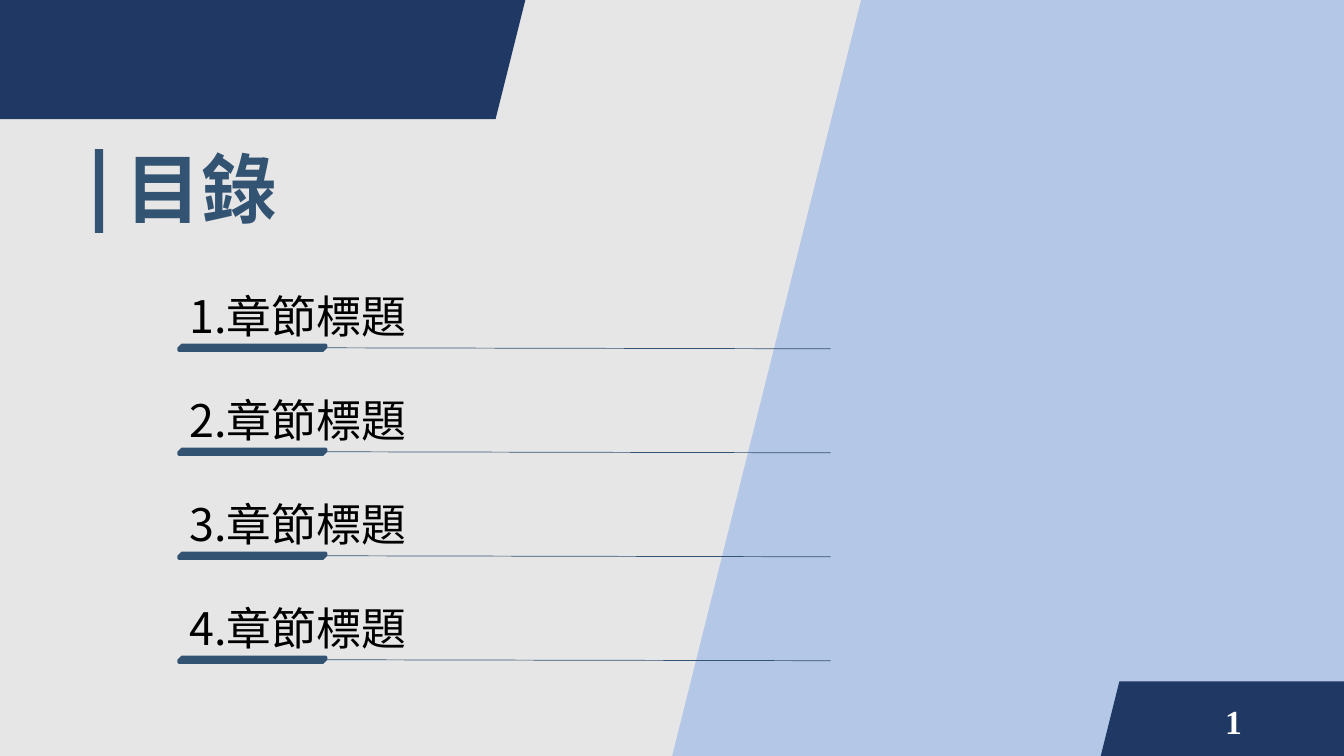
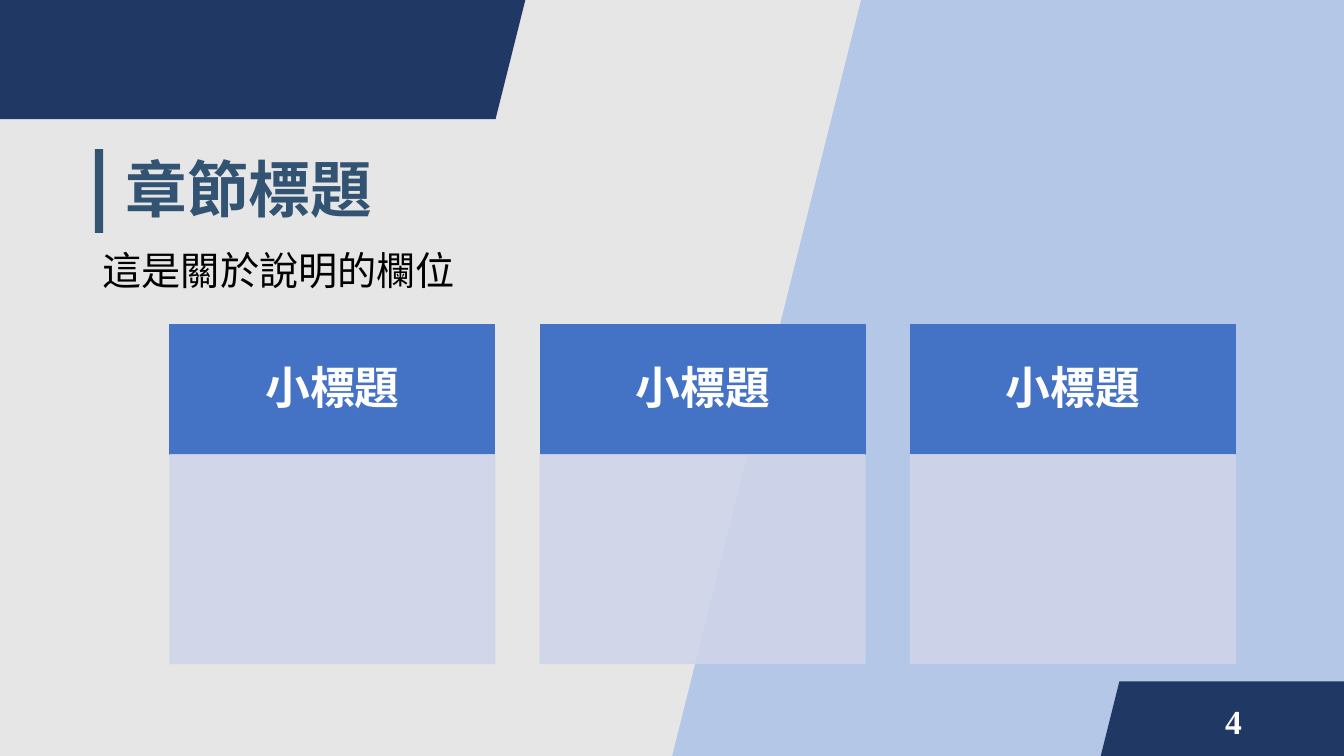
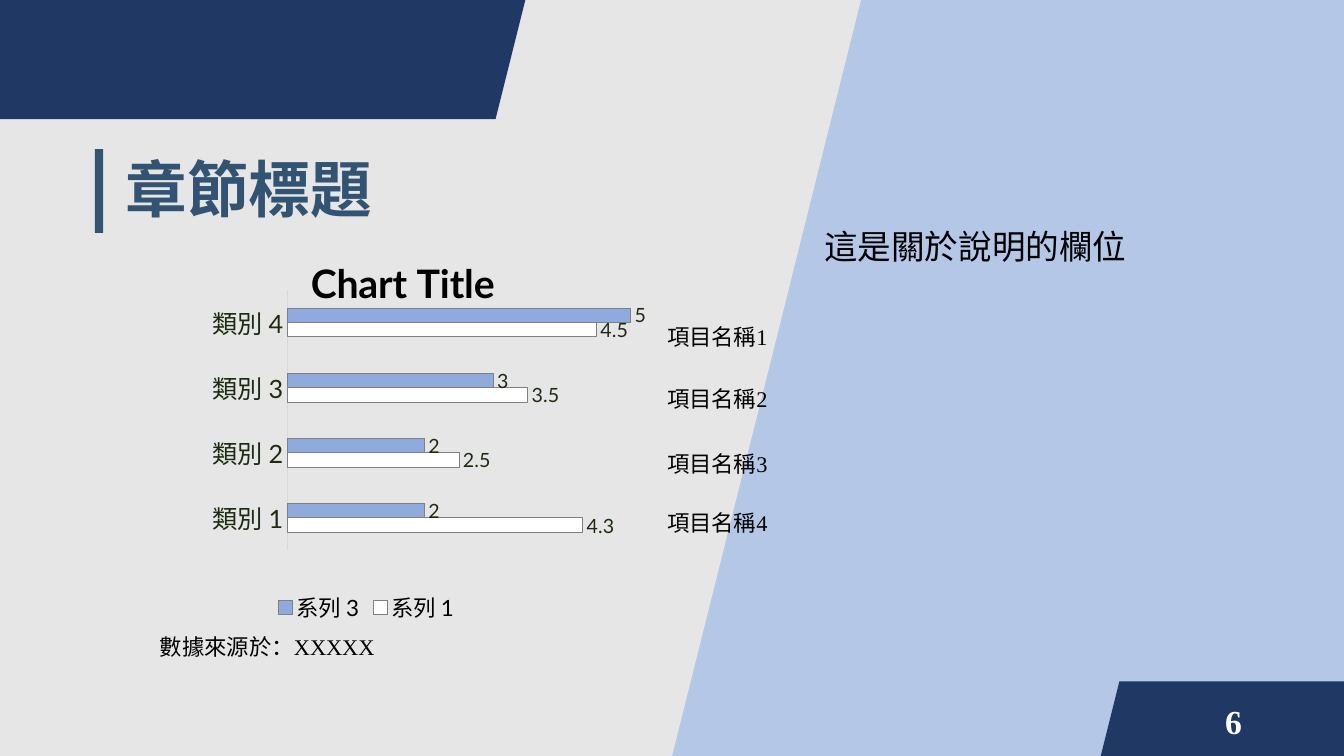
from dataclasses import dataclass
from typing import Optional

from lxml import etree
from pptx import Presentation
from pptx.chart.data import CategoryChartData
from pptx.dml.color import RGBColor
from pptx.enum.chart import XL_CHART_TYPE, XL_LABEL_POSITION, XL_LEGEND_POSITION, XL_TICK_MARK
from pptx.enum.shapes import MSO_CONNECTOR, MSO_SHAPE
from pptx.enum.text import MSO_ANCHOR, PP_ALIGN
from pptx.oxml.ns import qn
from pptx.util import Cm, Pt

# Enum members
PARALLELOGRAM = MSO_SHAPE.PARALLELOGRAM
RECTANGLE = MSO_SHAPE.RECTANGLE
SNIPPED = MSO_SHAPE.SNIP_2_DIAG_RECTANGLE
TOP, MIDDLE = MSO_ANCHOR.TOP, MSO_ANCHOR.MIDDLE
LEFT, CENTER, RIGHT = PP_ALIGN.LEFT, PP_ALIGN.CENTER, PP_ALIGN.RIGHT

# Shared colours and fonts
GREY = "E7E6E6"
NAVY = "203864"
PALE_BLUE = "B4C7E7"
STEEL = "335373"
HEADER_BLUE = "4472C4"
CARD_BLUE = "CFD5EA"
WHITE = "FFFFFF"
BLACK = "000000"
CHART_TEXT = "1C2B12"
AXIS_GREY = "D9D9D9"
BAR_OUTLINE = "808080"
SERIF = "Times New Roman"
SANS = "Noto Sans CJK SC"
CHART_FONT = "Lato"


@dataclass(frozen=True)
class Box:
    """Place and size in centimetres."""
    left: float
    top: float
    width: float
    height: float

    def lengths(self) -> tuple:
        return Cm(self.left), Cm(self.top), Cm(self.width), Cm(self.height)


@dataclass(frozen=True)
class TextStyle:
    size: int
    color: str = BLACK
    font: str = SERIF
    bold: bool = False
    align: PP_ALIGN = LEFT
    anchor: MSO_ANCHOR = TOP
    spacing: float = 1.0


@dataclass(frozen=True)
class Decoration:
    kind: MSO_SHAPE
    box: Box
    color: str


@dataclass(frozen=True)
class BarSeries:
    name: str
    values: tuple
    color: str


# Shared slide parts
DECORATIONS = (
    Decoration(PARALLELOGRAM, Box(-0.81, 0, 14.05, 3), NAVY),
    Decoration(PARALLELOGRAM, Box(16.94, 0, 21.79, 19.05), PALE_BLUE),
    Decoration(PARALLELOGRAM, Box(27.74, 17.17, 7.62, 1.88), NAVY),
    Decoration(RECTANGLE, Box(2.39, 3.76, 0.21, 2.11), STEEL),
)
TITLE_BOX = Box(2.92, 3.02, 28.63, 3.68)
NUMBER_BOX = Box(23.93, 17.65, 7.62, 1.02)
NUMBER_STYLE = TextStyle(24, WHITE, bold=True, align=RIGHT, anchor=MIDDLE)
AGENDA_STYLE = TextStyle(32, font=SANS, anchor=MIDDLE, spacing=0.9)
HEADER_STYLE = TextStyle(32, WHITE, SANS, True, CENTER, MIDDLE, 0.9)
SMALL_STYLE = TextStyle(16)

CHAPTER = "章節標題"
DESCRIPTION = "這是關於說明的欄位"
CATEGORIES = [f"類別 {number}" for number in range(1, 5)]
SERIES = (
    BarSeries("系列 1", (4.3, 2.5, 3.5, 4.5), WHITE),
    BarSeries("系列 3", (2, 2, 3, 5), "8FAADC"),
)
ITEM_TOPS = (8.03, 9.58, 11.23, 12.7)


def rgb(color: str) -> RGBColor:
    return RGBColor.from_string(color)


def set_font(font, size: int, color: str, name: str, bold: bool = False) -> None:
    font.size = Pt(size)
    font.bold = bold
    font.color.rgb = rgb(color)
    font.name = name


def write_text(shape, text: str, style: TextStyle) -> None:
    frame = shape.text_frame
    frame.word_wrap = True
    frame.vertical_anchor = style.anchor
    paragraph = frame.paragraphs[0]
    paragraph.text = text
    paragraph.alignment = style.align
    paragraph.line_spacing = style.spacing
    set_font(paragraph.font, style.size, style.color, style.font, style.bold)


def add_text(slide, box: Box, text: str, style: TextStyle) -> None:
    write_text(slide.shapes.add_textbox(*box.lengths()), text, style)


def add_filled(slide, kind: MSO_SHAPE, box: Box, color: str,
               outline: Optional[str] = None, opacity: int = 100):
    shape = slide.shapes.add_shape(kind, *box.lengths())
    shape.shadow.inherit = False
    shape.fill.solid()
    shape.fill.fore_color.rgb = rgb(color)
    if outline:
        shape.line.color.rgb = rgb(outline)
        shape.line.width = Pt(1)
    else:
        shape.line.fill.background()
    if opacity < 100:
        for element in list(shape.element.spPr.iter(qn("a:srgbClr"))):
            etree.SubElement(element, qn("a:alpha")).set("val", str(opacity * 1000))
    return shape


def add_rule(slide, left: float, top: float, right: float, bottom: float) -> None:
    rule = slide.shapes.add_connector(
        MSO_CONNECTOR.STRAIGHT, Cm(left), Cm(top), Cm(right), Cm(bottom))
    rule.line.color.rgb = rgb(STEEL)
    rule.line.width = Pt(0.5)
    etree.SubElement(rule.element.spPr, qn("a:effectLst"))


def add_base_slide(presentation, title: str, title_size: int, number: int):
    slide = presentation.slides.add_slide(presentation.slide_layouts[6])
    for part in DECORATIONS:
        add_filled(slide, part.kind, part.box, part.color)
    title_style = TextStyle(title_size, STEEL, bold=True, anchor=MIDDLE, spacing=0.9)
    add_text(slide, TITLE_BOX, title, title_style)
    add_text(slide, NUMBER_BOX, str(number), NUMBER_STYLE)
    return slide


def set_layout(parent, position: int, **values: object) -> None:
    """Give a chart part a manual layout."""
    for old in parent.findall(qn("c:layout")):
        parent.remove(old)
    layout = etree.Element(qn("c:layout"))
    manual = etree.SubElement(layout, qn("c:manualLayout"))
    for name, value in values.items():
        etree.SubElement(manual, qn(f"c:{name}")).set("val", str(value))
    parent.insert(position, layout)


def add_bar_chart(slide, box: Box) -> None:
    data = CategoryChartData()
    data.categories = CATEGORIES
    for series in SERIES:
        data.add_series(series.name, series.values)
    chart = slide.shapes.add_chart(
        XL_CHART_TYPE.BAR_CLUSTERED, *box.lengths(), data).chart
    set_font(chart.font, 10, CHART_TEXT, CHART_FONT)

    # Title and legend
    chart.has_title = True
    paragraph = chart.chart_title.text_frame.paragraphs[0]
    paragraph.text = "Chart Title"
    set_font(paragraph.font, 28, BLACK, CHART_FONT, True)
    set_layout(chart.chart_title.element, 1, xMode="edge", yMode="edge", x=0.41, y=0.03)
    chart.has_legend = True
    chart.legend.position = XL_LEGEND_POSITION.BOTTOM
    chart.legend.include_in_layout = False
    set_font(chart.legend.font, 16, BLACK, CHART_FONT)

    # Axes
    category_axis, value_axis = chart.category_axis, chart.value_axis
    category_axis.major_tick_mark = XL_TICK_MARK.NONE
    category_axis.format.line.color.rgb = rgb(AXIS_GREY)
    category_axis.format.line.width = Pt(0.75)
    set_font(category_axis.tick_labels.font, 18, CHART_TEXT, CHART_FONT)
    value_axis.visible = False
    value_axis.has_major_gridlines = False
    value_axis.minimum_scale, value_axis.maximum_scale = 0, 6

    # Bars and their labels
    plot = chart.plots[0]
    plot.gap_width = 250
    plot.vary_by_categories = False
    for bars, series in zip(plot.series, SERIES):
        bars.format.fill.solid()
        bars.format.fill.fore_color.rgb = rgb(series.color)
        bars.format.line.color.rgb = rgb(BAR_OUTLINE)
        bars.format.line.width = Pt(0.5)
        labels = bars.data_labels
        labels.show_value = True
        labels.position = XL_LABEL_POSITION.OUTSIDE_END
        set_font(labels.font, 14, CHART_TEXT, CHART_FONT)
    plot_area = chart.element.find(f".//{qn('c:plotArea')}")
    set_layout(plot_area, 0, layoutTarget="inner", xMode="edge", yMode="edge",
               x=0.386, y=0.138, w=0.594, h=0.665)


def add_agenda(presentation) -> None:
    slide = add_base_slide(presentation, "目錄", 54, 1)
    for index in range(4):
        top = 6.81 + index * 2.62
        add_text(slide, Box(4.52, top, 14.78, 2.44), f"{index + 1}.{CHAPTER}", AGENDA_STYLE)
        bar = add_filled(slide, SNIPPED, Box(4.47, top + 1.85, 3.78, 0.21), STEEL)
        bar.adjustments[0], bar.adjustments[1] = 0.5, 0.17
        add_rule(slide, 5.92, top + 1.95, 20.93, top + 1.98)


def add_cards(presentation) -> None:
    slide = add_base_slide(presentation, CHAPTER, 44, 4)
    add_text(slide, Box(2.34, 6.22, 29.21, 1.88), DESCRIPTION, TextStyle(28, spacing=0.9))
    for column in range(3):
        left = 4.29 + column * 9.33
        header = add_filled(slide, RECTANGLE, Box(left, 8.18, 8.18, 3.28),
                            HEADER_BLUE, HEADER_BLUE)
        write_text(header, "小標題", HEADER_STYLE)
        add_filled(slide, RECTANGLE, Box(left, 11.46, 8.18, 5.26),
                   CARD_BLUE, CARD_BLUE, 90)


def add_chart_slide(presentation) -> None:
    slide = add_base_slide(presentation, CHAPTER, 44, 6)
    add_text(slide, Box(3.78, 15.82, 6.86, 0.94), "數據來源於：XXXXX", SMALL_STYLE)
    add_text(slide, Box(20.52, 5.56, 10.77, 11.2), DESCRIPTION, TextStyle(24))
    add_bar_chart(slide, Box(0.48, 5.94, 17.5, 9.88))
    for number, top in enumerate(ITEM_TOPS, 1):
        add_text(slide, Box(16.56, top, 3.05, 0.94), f"項目名稱{number}", SMALL_STYLE)


def main() -> None:
    presentation = Presentation()
    presentation.slide_width, presentation.slide_height = Cm(33.87), Cm(19.05)
    background = presentation.slide_master.background.fill
    background.solid()
    background.fore_color.rgb = rgb(GREY)
    add_agenda(presentation)
    add_cards(presentation)
    add_chart_slide(presentation)
    presentation.save("out.pptx")


if __name__ == "__main__":
    main()
